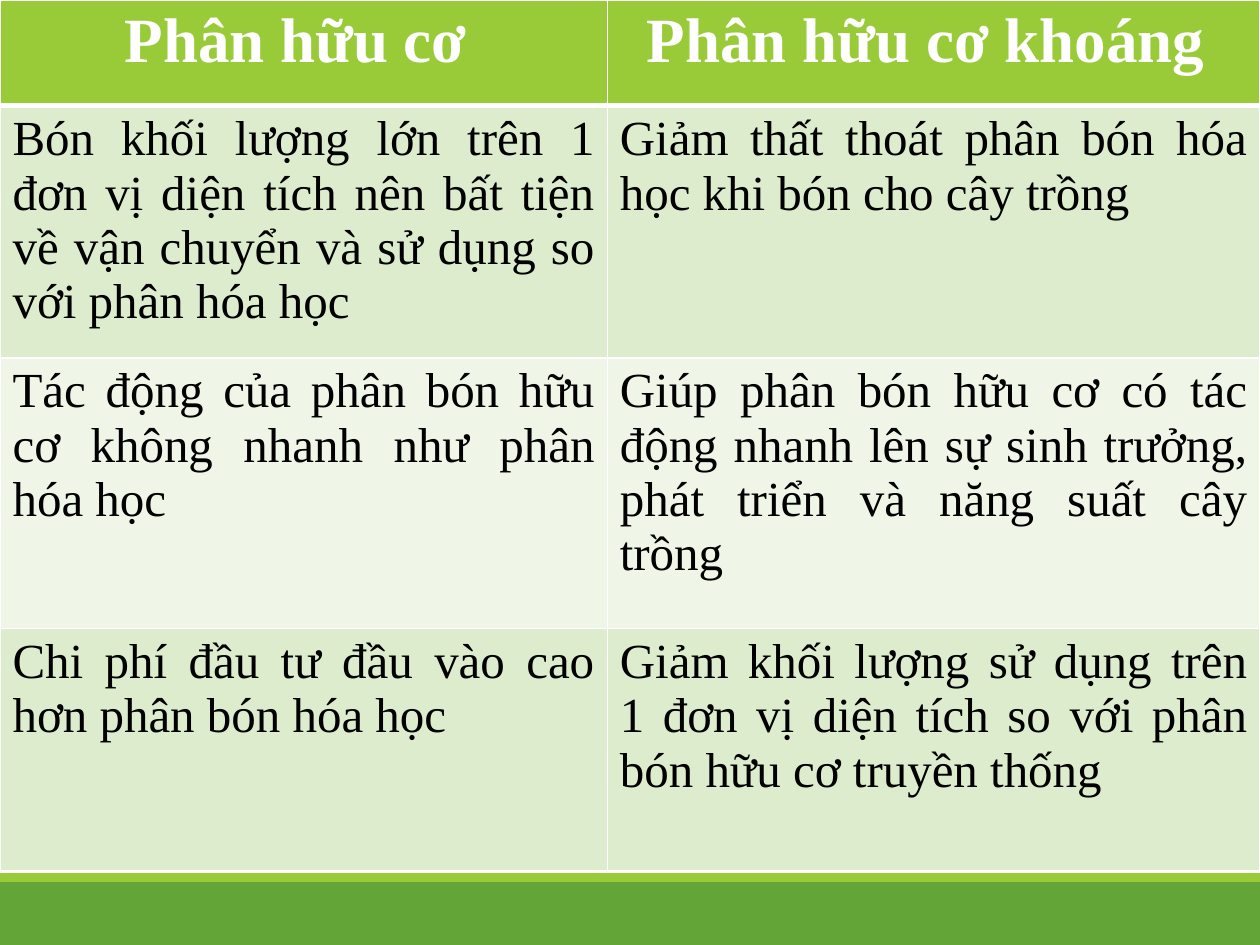
from lxml.etree import SubElement
from pptx import Presentation
from pptx.dml.color import RGBColor
from pptx.enum.shapes import MSO_SHAPE
from pptx.enum.text import PP_ALIGN
from pptx.oxml.ns import qn
from pptx.util import Inches, Pt

FONT = "Times New Roman"
WHITE, BLACK = "FFFFFF", "000000"
LIME, GREEN = "99CB38", "63A537"
BANDS = ["DEECCE", "EFF6E8"]

COLUMN_WIDTHS = [4.82, 5.18]
ROW_HEIGHTS = [0.84, 2, 2.15, 1.92]
COMPARISON = [
    ("Phân hữu cơ ", "Phân hữu cơ khoáng "),
    ("Bón khối lượng lớn trên 1 đơn vị diện tích nên bất tiện về vận chuyển và sử dụng so với phân hóa học",
     "Giảm thất thoát phân bón hóa học khi bón cho cây trồng"),
    ("Tác động của phân bón hữu cơ không nhanh như phân hóa học",
     "Giúp phân bón hữu cơ có tác động nhanh lên sự sinh trưởng, phát triển và năng suất cây trồng"),
    ("Chi phí đầu tư đầu vào cao hơn phân bón hóa học",
     "Giảm khối lượng sử dụng trên 1 đơn vị diện tích so với phân bón hữu cơ truyền thống"),
]

HEADING_FORMAT = {"name": FONT, "size": Pt(36), "bold": True}
BODY_FORMAT = {"name": FONT, "size": Pt(28), "bold": False}


def set_color(target, color):
    target.rgb = RGBColor.from_string(color)


def set_fill(target, color):
    target.fill.solid()
    set_color(target.fill.fore_color, color)


def add_band(slide, top, height, color):
    band = slide.shapes.add_shape(
        MSO_SHAPE.RECTANGLE, 0, Inches(top), Inches(10), Inches(height))
    band.shadow.inherit = False
    set_fill(band, color)
    band.line.fill.background()


def set_borders(cell, widths):
    """Draw white cell borders; widths maps each side (L, R, T, B) to points."""
    properties = cell._tc.get_or_add_tcPr()
    for side, width in widths.items():
        border = SubElement(properties, qn(f"a:ln{side}"), w=str(Pt(width)))
        solid = SubElement(border, qn("a:solidFill"))
        SubElement(solid, qn("a:srgbClr"), val=WHITE)


def write_cell(cell, text, text_format, color, alignment):
    cell.text = text
    paragraph = cell.text_frame.paragraphs[0]
    paragraph.alignment = alignment
    font = paragraph.runs[0].font
    for attribute, value in text_format.items():
        setattr(font, attribute, value)
    set_color(font.color, color)


def add_comparison(slide):
    table = slide.shapes.add_table(
        len(ROW_HEIGHTS), len(COLUMN_WIDTHS), 0, 0,
        Inches(sum(COLUMN_WIDTHS)), Inches(sum(ROW_HEIGHTS))).table
    for column, width in zip(table.columns, COLUMN_WIDTHS):
        column.width = Inches(width)
    for index, (row, height, texts) in enumerate(
            zip(table.rows, ROW_HEIGHTS, COMPARISON)):
        row.height = Inches(height)
        for cell, text in zip(row.cells, texts):
            set_borders(cell, {"L": 1, "R": 1, "T": 3 if index == 1 else 1,
                               "B": 3 if index == 0 else 1})
            if index == 0:
                set_fill(cell, LIME)
                write_cell(cell, text, HEADING_FORMAT, WHITE, PP_ALIGN.CENTER)
            else:
                set_fill(cell, BANDS[(index - 1) % 2])
                write_cell(cell, text, BODY_FORMAT, BLACK, PP_ALIGN.JUSTIFY)


def main():
    presentation = Presentation()
    presentation.slide_width = Inches(10)
    presentation.slide_height = Inches(7.5)
    slide = presentation.slides.add_slide(presentation.slide_layouts[6])
    set_fill(slide.background, WHITE)
    add_band(slide, 7, 0.5, GREEN)
    add_band(slide, 6.93, 0.07, LIME)
    add_comparison(slide)
    presentation.save("out.pptx")


if __name__ == "__main__":
    main()
